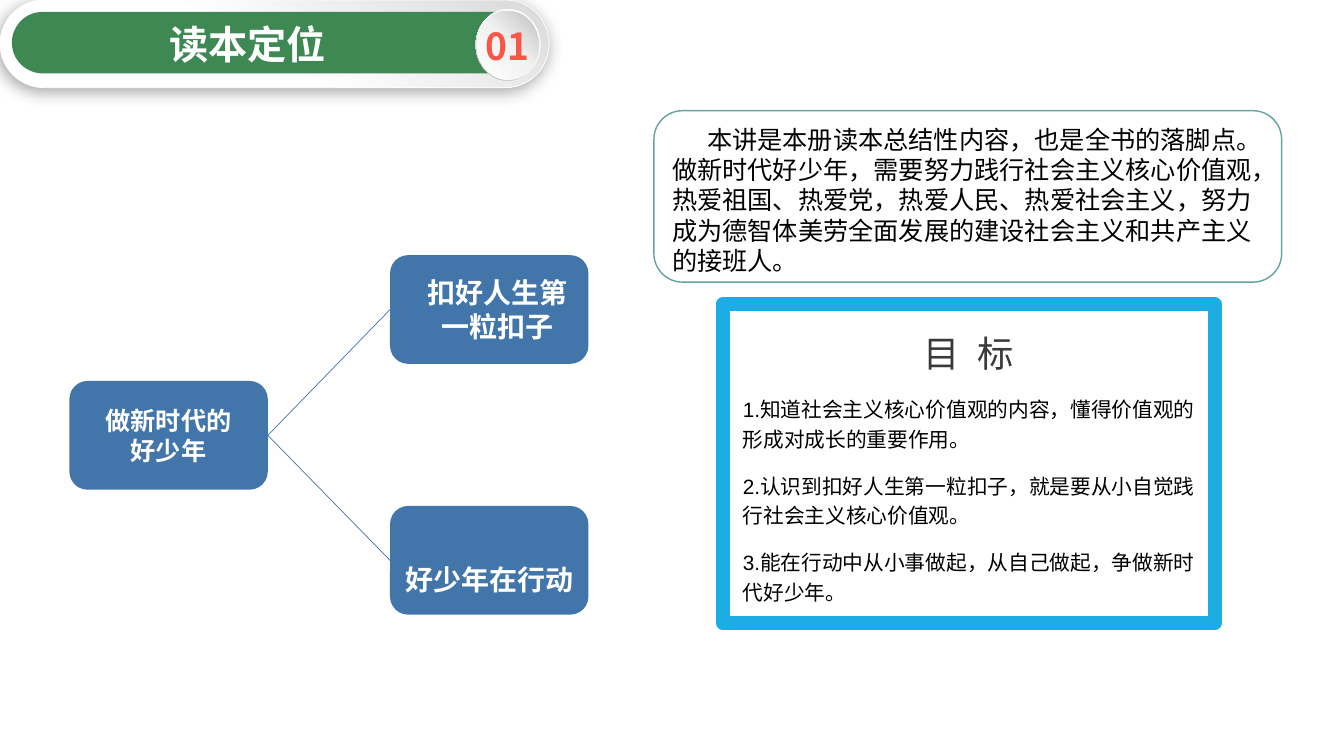
from lxml import etree
from pptx import Presentation
from pptx.dml.color import RGBColor
from pptx.enum.shapes import MSO_CONNECTOR, MSO_SHAPE
from pptx.enum.text import MSO_ANCHOR, MSO_AUTO_SIZE, PP_ALIGN
from pptx.oxml import parse_xml
from pptx.oxml.ns import nsdecls, qn
from pptx.util import Cm, Pt

WHITE = RGBColor(0xFF, 0xFF, 0xFF)
BLACK = RGBColor(0x00, 0x00, 0x00)
NODE_BLUE = RGBColor(0x42, 0x76, 0xAA)
FRAME_BLUE = RGBColor(0x1C, 0xAD, 0xE4)
TEAL = RGBColor(0x62, 0xA3, 0x9F)
GREEN = RGBColor(0x3E, 0x88, 0x53)
RED = RGBColor(0xF9, 0x56, 0x47)
DARK_GREY = RGBColor(0x3A, 0x3A, 0x3A)
GREY_F2 = RGBColor(0xF2, 0xF2, 0xF2)
GREY_D9 = RGBColor(0xD9, 0xD9, 0xD9)
GREY_BF = RGBColor(0xBF, 0xBF, 0xBF)
GREY_A6 = RGBColor(0xA6, 0xA6, 0xA6)
HAN_FONT = "Noto Sans CJK SC"

INTRO = ("本讲是本册读本总结性内容，也是全书的落脚点。做新时代好少年，"
         "需要努力践行社会主义核心价值观，热爱祖国、热爱党，热爱人民、"
         "热爱社会主义，努力成为德智体美劳全面发展的建设社会主义和共产主义的接班人。")
GOALS = [
    "1.知道社会主义核心价值观的内容，懂得价值观的形成对成长的重要作用。",
    "2.认识到扣好人生第一粒扣子，就是要从小自觉践行社会主义核心价值观。",
    "3.能在行动中从小事做起，从自己做起，争做新时代好少年。",
]


def place(sp, left, top, width, height):
    sp.left, sp.top, sp.width, sp.height = Cm(left), Cm(top), Cm(width), Cm(height)


def style(sp, fill=None, line=None, weight=1):
    if fill is not None:
        sp.fill.solid()
        sp.fill.fore_color.rgb = fill
    if line is None:
        sp.line.fill.background()
    else:
        sp.line.color.rgb = line
        sp.line.width = Pt(weight)


def add_box(s, kind, box, fill=None, line=None, weight=1, adj=None):
    sp = s.shapes.add_shape(kind, *[Cm(v) for v in box])
    sp.shadow.inherit = False
    style(sp, fill, line, weight)
    if adj is not None:
        sp.adjustments[0] = adj
    return sp


def set_gradient(sp, stops, angle):
    gs = "".join(f'<a:gs pos="{pos * 1000}"><a:srgbClr val="{color}"/></a:gs>'
                 for pos, color in stops)
    sp.element.spPr.find(qn("a:prstGeom")).addnext(parse_xml(
        f'<a:gradFill {nsdecls("a")} rotWithShape="1"><a:gsLst>{gs}</a:gsLst>'
        f'<a:lin ang="{angle * 60000}" scaled="0"/></a:gradFill>'))


def add_shadow(sp):
    sp.element.spPr.find(qn("a:effectLst")).append(parse_xml(
        f'<a:outerShdw {nsdecls("a")} blurRad="{Pt(12)}" dist="{Pt(3)}" '
        f'dir="{135 * 60000}" algn="tr" rotWithShape="0"><a:srgbClr val="{BLACK}">'
        '<a:alpha val="34000"/></a:srgbClr></a:outerShdw>'))


def set_frame(sp, insets, anchor=MSO_ANCHOR.MIDDLE, wrap=True):
    tf = sp.text_frame
    tf.auto_size = MSO_AUTO_SIZE.NONE
    tf.word_wrap = wrap
    tf.vertical_anchor = anchor
    tf.margin_left, tf.margin_top, tf.margin_right, tf.margin_bottom = map(Cm, insets)
    return tf


def add_text(p, text, size, color, bold=False, align=PP_ALIGN.CENTER, font=HAN_FONT):
    p.alignment = align
    r = p.add_run()
    r.text = text
    r.font.size = Pt(size)
    r.font.bold = bold
    r.font.color.rgb = color
    r.font.name = font
    etree.SubElement(r.font._element, qn("a:ea")).set("typeface", HAN_FONT)
    return r


def add_node(s, left, top, text, size, insets):
    sp = add_box(s, MSO_SHAPE.ROUNDED_RECTANGLE, (left, top, 5, 2.74), NODE_BLUE, adj=0.167)
    tf = set_frame(sp, insets)
    add_text(tf.paragraphs[0], text, size, WHITE, bold=True)
    return sp


def add_link(s, parent, child):
    line = s.shapes.add_connector(MSO_CONNECTOR.STRAIGHT, 0, 0, 0, 0)
    line.begin_connect(parent, 3)
    line.end_connect(child, 1)
    line.line.color.rgb = NODE_BLUE
    line.line.width = Pt(0.5)
    etree.SubElement(line.element.spPr, qn("a:effectLst"))


def add_mind_map(s):
    root = add_node(s, 1.75, 9.6, "做新时代的好少年", 18, (0.5, 0.13, 0.5, 0.13))
    button = add_node(s, 9.83, 6.43, "扣好人生第一粒扣子", 20, (0.5, 0.13, 0.1, 0.13))
    action = add_node(s, 9.83, 12.75, "好少年在行动", 20, (0.13, 1.07, 0.13, 0.13))
    for child in (button, action):
        add_link(s, root, child)


def add_intro(s):
    sp = add_box(s, MSO_SHAPE.ROUNDED_RECTANGLE, (16.48, 2.79, 15.82, 4.32), WHITE, TEAL)
    tf = set_frame(sp, (0.25, 0.13, 0.25, 0.13), MSO_ANCHOR.TOP)
    p = tf.paragraphs[0]
    add_text(p, INTRO, 18, BLACK, align=PP_ALIGN.LEFT)
    p._p.get_or_add_pPr().set("indent", str(Cm(0.88)))


def fill_goals(body):
    place(body, 18.21, 7.67, 12.4, 8.03)
    style(body, WHITE, FRAME_BLUE, 10)
    tf = set_frame(body, (0.51, 0.25, 0.51, 0.25))
    p = tf.paragraphs[0]
    heading = add_text(p, "目 标", 25.9, DARK_GREY, font="Arial")
    heading.font._element.set("spc", "360")
    for goal in GOALS:
        add_text(tf.add_paragraph(), goal, 14.8, BLACK, align=PP_ALIGN.JUSTIFY, font="Arial")
    for i, p in enumerate(tf.paragraphs):
        p.line_spacing = 1.2
        p.space_before = Pt(12 if i else 0)
        pPr = p._p.get_or_add_pPr()
        pPr.set("marL", "0")
        pPr.set("indent", "0")
        etree.SubElement(pPr, qn("a:buNone"))


def add_banner(s, title):
    # Capsule and green bar
    capsule = add_box(s, MSO_SHAPE.ROUNDED_RECTANGLE, (0, 0, 13.84, 2.21),
                      line=WHITE, weight=0.5, adj=0.5)
    set_gradient(capsule, [(45, WHITE), (100, GREY_D9)], 300)
    add_shadow(capsule)
    add_box(s, MSO_SHAPE.ROUNDED_RECTANGLE, (0.3, 0.3, 13.18, 1.55), GREEN, adj=0.5)

    # Title, raised above the bar
    place(title, 4.01, 0.38, 4.72, 1.45)
    tf = set_frame(title, (0.25, 0.13, 0.25, 0.13))
    tf.paragraphs[0].line_spacing = 1.0
    add_text(tf.paragraphs[0], "读本定位", 28, WHITE, bold=True, align=PP_ALIGN.LEFT)
    title.element.getparent().append(title.element)

    # Number badge
    ring = add_box(s, MSO_SHAPE.DONUT, (11.99, 0.23, 1.63, 1.8), adj=0.049)
    set_gradient(ring, [(0, WHITE), (55, GREY_F2), (100, GREY_A6)], 135)
    badge = add_box(s, MSO_SHAPE.OVAL, (12.01, 0.28, 1.57, 1.73))
    set_gradient(badge, [(0, WHITE), (51, GREY_F2), (100, GREY_BF)], 315)
    tf = set_frame(badge, (0, 0, 0, 0), wrap=False)
    add_text(tf.paragraphs[0], "01", 26.6, RED, bold=True)


def main():
    prs = Presentation()
    prs.slide_width, prs.slide_height = Cm(33.87), Cm(19.05)
    s = prs.slides.add_slide(prs.slide_layouts[1])
    add_mind_map(s)
    fill_goals(s.placeholders[1])
    add_intro(s)
    add_banner(s, s.shapes.title)
    prs.save("out.pptx")


if __name__ == "__main__":
    main()
